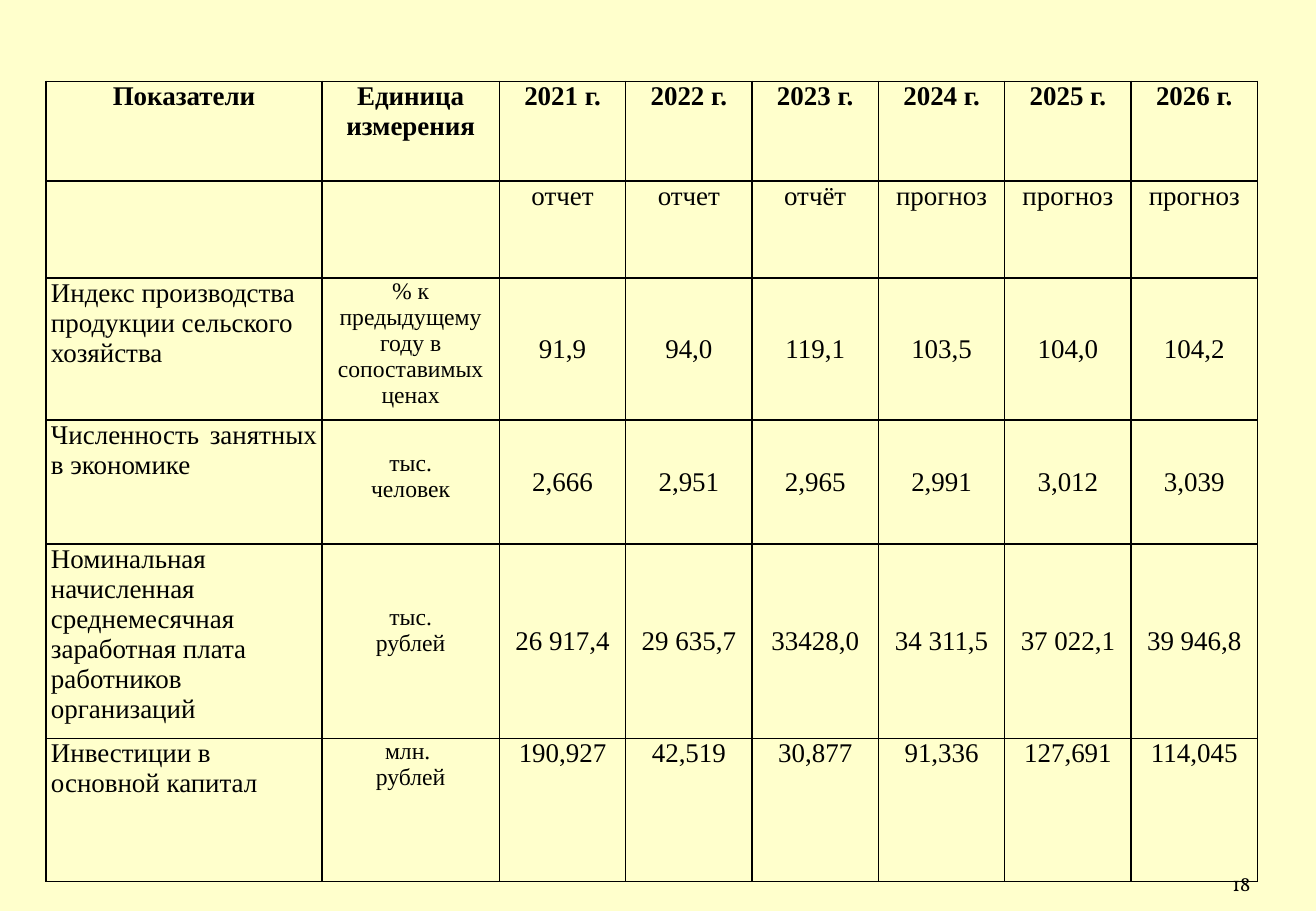
from dataclasses import dataclass

from lxml.etree import SubElement
from pptx import Presentation
from pptx.dml.color import RGBColor
from pptx.enum.text import MSO_ANCHOR as Anchor, PP_ALIGN as Align
from pptx.oxml.ns import qn
from pptx.util import Inches, Pt

CREAM = RGBColor(0xFF, 0xFF, 0xCC)
BLACK = RGBColor(0, 0, 0)
BODY_FONT = "Times New Roman"
NUMBER_FONT = "Vollkorn"
COLUMN_WIDTHS = [2.27, 1.46] + [1.04] * 6


@dataclass
class Row:
    height: float
    name: str
    unit: str
    values: list[str]
    bold: bool = False
    name_align: Align = Align.LEFT
    unit_size: int = 14
    unit_top: float = 0
    value_anchor: Anchor = Anchor.MIDDLE


ROWS = [
    Row(0.82, "Показатели", "Единица измерения",
        [f"{year} г." for year in range(2021, 2027)],
        bold=True, name_align=Align.CENTER, unit_size=16, value_anchor=Anchor.TOP),
    Row(0.8, "", "", ["отчет", "отчет", "отчёт"] + ["прогноз"] * 3,
        value_anchor=Anchor.TOP),
    Row(1.17, "Индекс производства продукции сельского хозяйства",
        "% к предыдущему году в сопоставимых ценах",
        ["91,9", "94,0", "119,1", "103,5", "104,0", "104,2"]),
    Row(1.02, "Численность занятных в экономике", "тыс.\nчеловек",
        ["2,666", "2,951", "2,965", "2,991", "3,012", "3,039"],
        name_align=Align.JUSTIFY, unit_top=0.25),
    Row(1.6, "Номинальная начисленная среднемесячная заработная плата "
        "работников организаций", "тыс.\nрублей",
        ["26 917,4", "29 635,7", "33428,0", "34 311,5", "37 022,1", "39 946,8"],
        unit_top=0.5),
    Row(1.18, "Инвестиции в основной капитал", "млн. \nрублей",
        ["190,927", "42,519", "30,877", "91,336", "127,691", "114,045"],
        value_anchor=Anchor.TOP),
]


def format_text(frame, align: Align, size: int, font: str, bold: bool = False) -> None:
    for para in frame.paragraphs:
        para.alignment = align
        for span in para.runs:
            span.font.name = font
            span.font.size = Pt(size)
            span.font.bold = bold
            span.font.color.rgb = BLACK


def add_borders(cell) -> None:
    properties = cell._tc.get_or_add_tcPr()
    for side in ("a:lnL", "a:lnR", "a:lnT", "a:lnB"):
        line = SubElement(properties, qn(side), w=str(Pt(1)))
        fill = SubElement(line, qn("a:solidFill"))
        SubElement(fill, qn("a:srgbClr"), val=str(BLACK))


def fill_cell(cell, text: str, align: Align, size: int = 16, bold: bool = False,
              anchor: Anchor = Anchor.TOP, top: float = 0) -> None:
    add_borders(cell)
    cell.fill.background()
    side = 0.01 if anchor == Anchor.MIDDLE else 0.04
    cell.margin_left = cell.margin_right = Inches(side)
    cell.margin_top, cell.margin_bottom = Inches(top), 0
    cell.vertical_anchor = anchor
    cell.text_frame.text = text
    format_text(cell.text_frame, align, size, BODY_FONT, bold)


def add_page_number(page) -> None:
    box = page.shapes.add_textbox(Inches(9.39), Inches(7.02), Inches(0.9), Inches(0.4))
    frame = box.text_frame
    frame.word_wrap = True
    frame.margin_left = frame.margin_right = 0
    frame.vertical_anchor = Anchor.BOTTOM
    frame.text = "18"
    format_text(frame, Align.RIGHT, 12, NUMBER_FONT)


def add_indicator_table(page) -> None:
    table = page.shapes.add_table(
        len(ROWS), len(COLUMN_WIDTHS), Inches(0.38), Inches(0.67),
        Inches(sum(COLUMN_WIDTHS)), Inches(sum(row.height for row in ROWS))).table
    table.first_row = table.horz_banding = False
    for column, width in zip(table.columns, COLUMN_WIDTHS):
        column.width = Inches(width)
    for table_row, row in zip(table.rows, ROWS):
        table_row.height = Inches(row.height)
        name_cell, unit_cell, *value_cells = table_row.cells
        fill_cell(name_cell, row.name, row.name_align, bold=row.bold)
        fill_cell(unit_cell, row.unit, Align.CENTER, row.unit_size, row.bold,
                  top=row.unit_top)
        for cell, value in zip(value_cells, row.values):
            fill_cell(cell, value, Align.CENTER, bold=row.bold, anchor=row.value_anchor)


def main() -> None:
    deck = Presentation()
    deck.slide_width, deck.slide_height = Inches(10.83), Inches(7.5)
    page = deck.slides.add_slide(deck.slide_layouts[6])

    # Background
    page.background.fill.solid()
    page.background.fill.fore_color.rgb = CREAM

    # Page number, behind the table
    add_page_number(page)

    # Economic indicators by year
    add_indicator_table(page)

    deck.save("out.pptx")


if __name__ == "__main__":
    main()
